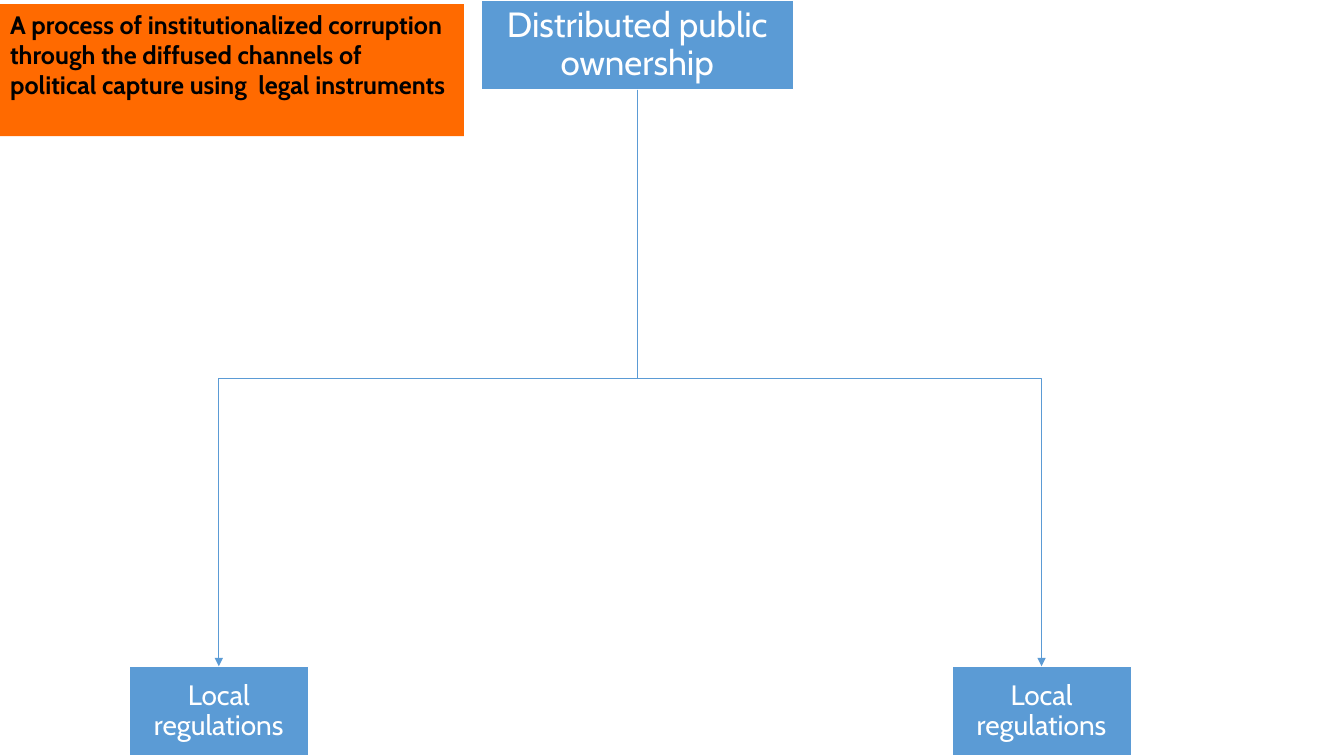
from dataclasses import dataclass

from lxml import etree
from pptx import Presentation
from pptx.dml.color import RGBColor
from pptx.enum.shapes import MSO_CONNECTOR, MSO_SHAPE
from pptx.enum.text import MSO_ANCHOR, MSO_AUTO_SIZE, PP_ALIGN
from pptx.oxml.ns import qn
from pptx.util import Inches, Pt

ELBOW = MSO_CONNECTOR.ELBOW
RECTANGLE = MSO_SHAPE.RECTANGLE
TOP, MIDDLE = MSO_ANCHOR.TOP, MSO_ANCHOR.MIDDLE
LEFT, CENTER = PP_ALIGN.LEFT, PP_ALIGN.CENTER
NO_AUTOFIT = MSO_AUTO_SIZE.NONE
TITLE_ONLY = 5


@dataclass(frozen=True)
class Theme:
    font: str = "Cabin"
    blue: RGBColor = RGBColor(0x5B, 0x9B, 0xD5)
    orange: RGBColor = RGBColor(0xFF, 0x6A, 0x00)
    white: RGBColor = RGBColor(0xFF, 0xFF, 0xFF)
    black: RGBColor = RGBColor(0, 0, 0)
    title_size: int = 18
    root_size: int = 25
    branch_size: int = 20


THEME = Theme()

TITLE = (
    "A process of institutionalized corruption through the diffused channels "
    "of political capture using  legal instruments"
)
BOX_HEIGHT = 0.89
BRANCH_WIDTH = 1.78
BRANCH_TOP = 6.61
BRANCH_LEFTS = (1.28, 9.44)
ROOT_CENTER = 6.32
ROOT_WIDTH = 3.1


def set_values(target, values):
    for name, value in values.items():
        setattr(target, name, value)


def place(shape, left, top, width, height):
    set_values(shape, {
        "left": Inches(left), "top": Inches(top),
        "width": Inches(width), "height": Inches(height),
    })


def fill_solid(shape, color):
    shape.fill.solid()
    shape.fill.fore_color.rgb = color


def write_text(shape, text, size, color, bold, align, frame_format):
    frame = shape.text_frame
    set_values(frame, {"word_wrap": True, "auto_size": NO_AUTOFIT, **frame_format})
    para = frame.paragraphs[0]
    para.alignment = align
    span = para.add_run()
    span.text = text
    set_values(span.font, {"name": THEME.font, "size": Pt(size), "bold": bold})
    span.font.color.rgb = color
    return para


def add_title(page):
    title = page.shapes.title
    place(title, 0, 0.04, 4.6, 1.31)
    fill_solid(title, THEME.orange)
    write_text(title, TITLE, THEME.title_size, THEME.black, True, LEFT,
               {"vertical_anchor": TOP})


def add_node(page, text, left, top, width, size):
    box = page.shapes.add_shape(RECTANGLE, 0, 0, 0, 0)
    place(box, left, top, width, BOX_HEIGHT)
    box.shadow.inherit = False
    fill_solid(box, THEME.blue)
    box.line.color.rgb = THEME.white
    box.line.width = Pt(1)
    margins = {f"margin_{side}": Inches(0.02)
               for side in ("left", "top", "right", "bottom")}
    para = write_text(box, text, size, THEME.white, False, CENTER,
                      {"vertical_anchor": MIDDLE, **margins})
    para.line_spacing = 0.9


def add_branch_arrow(page, start_x, start_y, end_x, end_y):
    """Draw a down-across-down elbow: a quarter-turned across-down-across one."""
    drop, reach = end_y - start_y, abs(end_x - start_x)
    left = (start_x + end_x - drop) / 2
    top = (start_y + end_y - reach) / 2
    right, bottom = left + drop, top + reach
    goes_right = end_x > start_x
    first_x, last_x = (right, left) if goes_right else (left, right)
    arrow = page.shapes.add_connector(
        ELBOW, Inches(first_x), Inches(top), Inches(last_x), Inches(bottom))
    arrow.line.color.rgb = THEME.blue
    arrow.line.width = Pt(0.5)
    properties = arrow._element.spPr
    quarter_turns = 3 if goes_right else 1
    properties.find(qn("a:xfrm")).set("rot", str(quarter_turns * 90 * 60000))
    line = properties.find(qn("a:ln"))
    etree.SubElement(line, qn("a:tailEnd"), type="triangle")
    etree.SubElement(properties, qn("a:effectLst"))


def main():
    deck = Presentation()
    deck.slide_width, deck.slide_height = Inches(13.33), Inches(7.5)
    page = deck.slides.add_slide(deck.slide_layouts[TITLE_ONLY])

    add_title(page)
    add_node(page, "Distributed public ownership", ROOT_CENTER - ROOT_WIDTH / 2,
             0, ROOT_WIDTH, THEME.root_size)
    for left in BRANCH_LEFTS:
        add_node(page, "Local regulations", left, BRANCH_TOP, BRANCH_WIDTH,
                 THEME.branch_size)
        add_branch_arrow(page, ROOT_CENTER, BOX_HEIGHT,
                         left + BRANCH_WIDTH / 2, BRANCH_TOP)

    deck.save("out.pptx")


if __name__ == "__main__":
    main()
